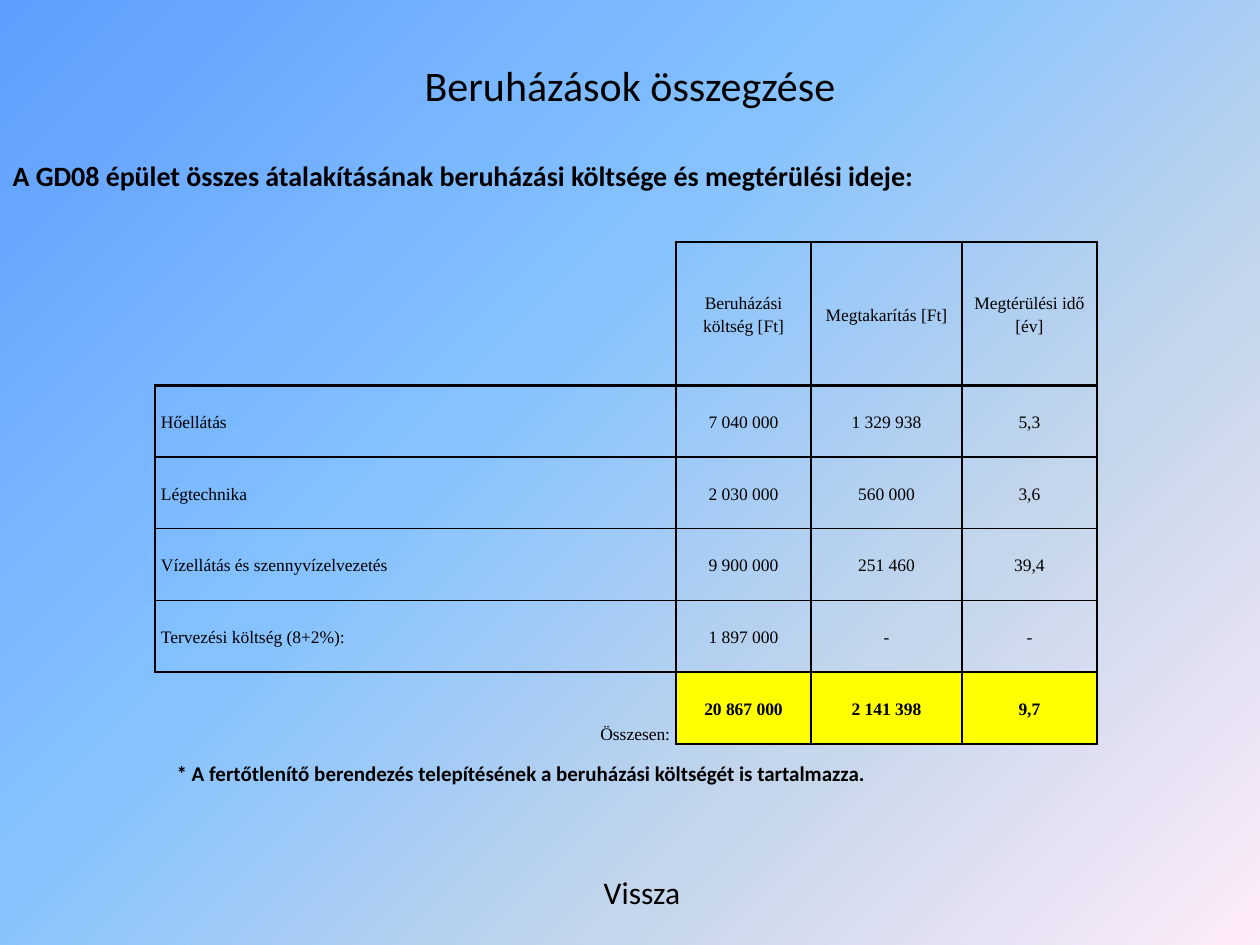
from lxml import etree
from pptx import Presentation
from pptx.dml.color import RGBColor
from pptx.enum.text import MSO_ANCHOR, MSO_AUTO_SIZE, PP_ALIGN
from pptx.oxml.ns import qn
from pptx.util import Emu, Pt

LEFT, CENTER, RIGHT = PP_ALIGN.LEFT, PP_ALIGN.CENTER, PP_ALIGN.RIGHT
MIDDLE, BOTTOM = MSO_ANCHOR.MIDDLE, MSO_ANCHOR.BOTTOM
BLACK = RGBColor(0x00, 0x00, 0x00)
YELLOW = RGBColor(0xFF, 0xFF, 0x00)
GRADIENT = [
    (0, RGBColor(0x5E, 0x9E, 0xFF)),
    (40, RGBColor(0x85, 0xC2, 0xFF)),
    (70, RGBColor(0xC4, 0xD6, 0xEB)),
    (100, RGBColor(0xFF, 0xEB, 0xFA)),
]

PX_PER_INCH = 126
BODY_FONT, TABLE_FONT = "Calibri", "Times New Roman"
COLUMN_WIDTHS = [521, 135, 151, 135]
ROWS = [
    ["", "Beruházási költség [Ft]", "Megtakarítás [Ft]", "Megtérülési idő [év]"],
    ["Hőellátás", "7 040 000", "1 329 938", "5,3"],
    ["Légtechnika", "2 030 000", "560 000", "3,6"],
    ["Vízellátás és szennyvízelvezetés", "9 900 000", "251 460", "39,4"],
    ["Tervezési költség (8+2%):", "1 897 000", "-", "-"],
    ["Összesen:", "20 867 000", "2 141 398", "9,7"],
]
LAST = len(ROWS) - 1


def px(length):
    return Emu(round(length * 914400 / PX_PER_INCH))


def set_attributes(target, values):
    for name, value in values.items():
        setattr(target, name, value)


def place(shape, box):
    set_attributes(shape, dict(zip(("left", "top", "width", "height"), map(px, box))))


def write(paragraph, text, size, font=BODY_FONT, bold=False, **formats):
    run = paragraph.add_run()
    run.text = text
    set_attributes(run.font, {"name": font, "size": Pt(size), "bold": bold})
    run.font.color.rgb = BLACK
    set_attributes(paragraph, formats)


def paint_background(slide):
    fill = slide.background.fill
    fill.gradient()
    fill.gradient_angle = 315
    stops = slide._element.find(".//" + qn("a:gsLst"))
    for stop in list(stops):
        stops.remove(stop)
    for percent, color in GRADIENT:
        stop = etree.SubElement(stops, qn("a:gs"), pos=str(percent * 1000))
        etree.SubElement(stop, qn("a:srgbClr"), val=str(color))


def add_title(slide, box):
    title = slide.shapes.title
    place(title, box)
    title.text_frame.vertical_anchor = MIDDLE
    write(title.text_frame.paragraphs[0], "Beruházások összegzése", 24, alignment=CENTER)


def add_body(slide, box):
    """Fill the body with the heading above the table and the note below it."""
    body = slide.placeholders[1]
    place(body, box)
    frame = body.text_frame
    frame.auto_size = MSO_AUTO_SIZE.NONE
    lines = [
        ("A GD08 épület összes átalakításának beruházási költsége és megtérülési ideje:",
         16, 0, 0),
        ("* A fertőtlenítő berendezés telepítésének a beruházási költségét is tartalmazza.",
         12, 325, 164),
    ]
    for index, (text, size, space, margin) in enumerate(lines):
        paragraph = frame.add_paragraph() if index else frame.paragraphs[0]
        write(paragraph, text, size, bold=True, alignment=LEFT, space_before=Pt(space))
        properties = paragraph._p.get_or_add_pPr()
        properties.set("marL", str(px(margin)))
        properties.set("indent", "0")
        etree.SubElement(properties, qn("a:buNone"))


def set_borders(cell, widths):
    """Draw left, right, top and bottom borders; a width of 0 hides one."""
    properties = cell._tc.get_or_add_tcPr()
    for index, (side, width) in enumerate(zip("LRTB", widths)):
        line = etree.Element(qn("a:ln" + side), w=str(Pt(width)))
        if width:
            fill = etree.SubElement(line, qn("a:solidFill"))
            etree.SubElement(fill, qn("a:srgbClr"), val=str(BLACK))
        else:
            etree.SubElement(line, qn("a:noFill"))
        properties.insert(index, line)


def border_widths(row, column):
    open_corner = column == 0 and row in (0, LAST)
    top = 1.5 if row in (1, LAST) else 1
    bottom = 1.5 if row in (0, LAST - 1) else 1
    return (
        0 if open_corner else 1,
        1,
        0 if open_corner and row == 0 else top,
        0 if open_corner and row == LAST else bottom,
    )


def fill_cell(cell, row, column, text):
    is_total = row == LAST
    set_attributes(cell, {
        "margin_left": px(6), "margin_right": px(6), "margin_top": 0, "margin_bottom": 0,
        "vertical_anchor": BOTTOM if is_total and column == 0 else MIDDLE,
    })
    if is_total and column:
        cell.fill.solid()
        cell.fill.fore_color.rgb = YELLOW
    else:
        cell.fill.background()
    if text:
        alignment = CENTER if column else RIGHT if is_total else LEFT
        write(cell.text_frame.paragraphs[0], text, 10, TABLE_FONT,
              bold=bool(is_total and column), alignment=alignment, line_spacing=1.15)
    set_borders(cell, border_widths(row, column))


def add_cost_table(slide, box):
    """Place the cost table; the header is twice as tall as the other rows."""
    frame = slide.shapes.add_table(len(ROWS), len(COLUMN_WIDTHS), *map(px, box))
    table = frame.table
    set_attributes(table, {"first_row": False, "horz_banding": False})
    for column, width in zip(table.columns, COLUMN_WIDTHS):
        column.width = px(width)
    unit = box[3] / (len(ROWS) + 1)
    for row, texts in enumerate(ROWS):
        table.rows[row].height = px(unit if row else 2 * unit)
        for column, text in enumerate(texts):
            fill_cell(table.cell(row, column), row, column, text)


def add_back_label(slide, box):
    frame = slide.shapes.add_textbox(*map(px, box)).text_frame
    set_attributes(frame, {"word_wrap": False, "auto_size": MSO_AUTO_SIZE.SHAPE_TO_FIT_TEXT})
    write(frame.paragraphs[0], "Vissza", 18, alignment=CENTER)


def main():
    presentation = Presentation()
    presentation.slide_width, presentation.slide_height = px(1260), px(945)
    slide = presentation.slides.add_slide(presentation.slide_layouts[1])
    paint_background(slide)
    add_title(slide, (63, 6, 1134, 158))
    add_back_label(slide, (591, 867, 102, 50))
    add_body(slide, (0, 152, 1260, 683))
    add_cost_table(slide, (155, 242, sum(COLUMN_WIDTHS), 502))
    presentation.save("out.pptx")


if __name__ == "__main__":
    main()
